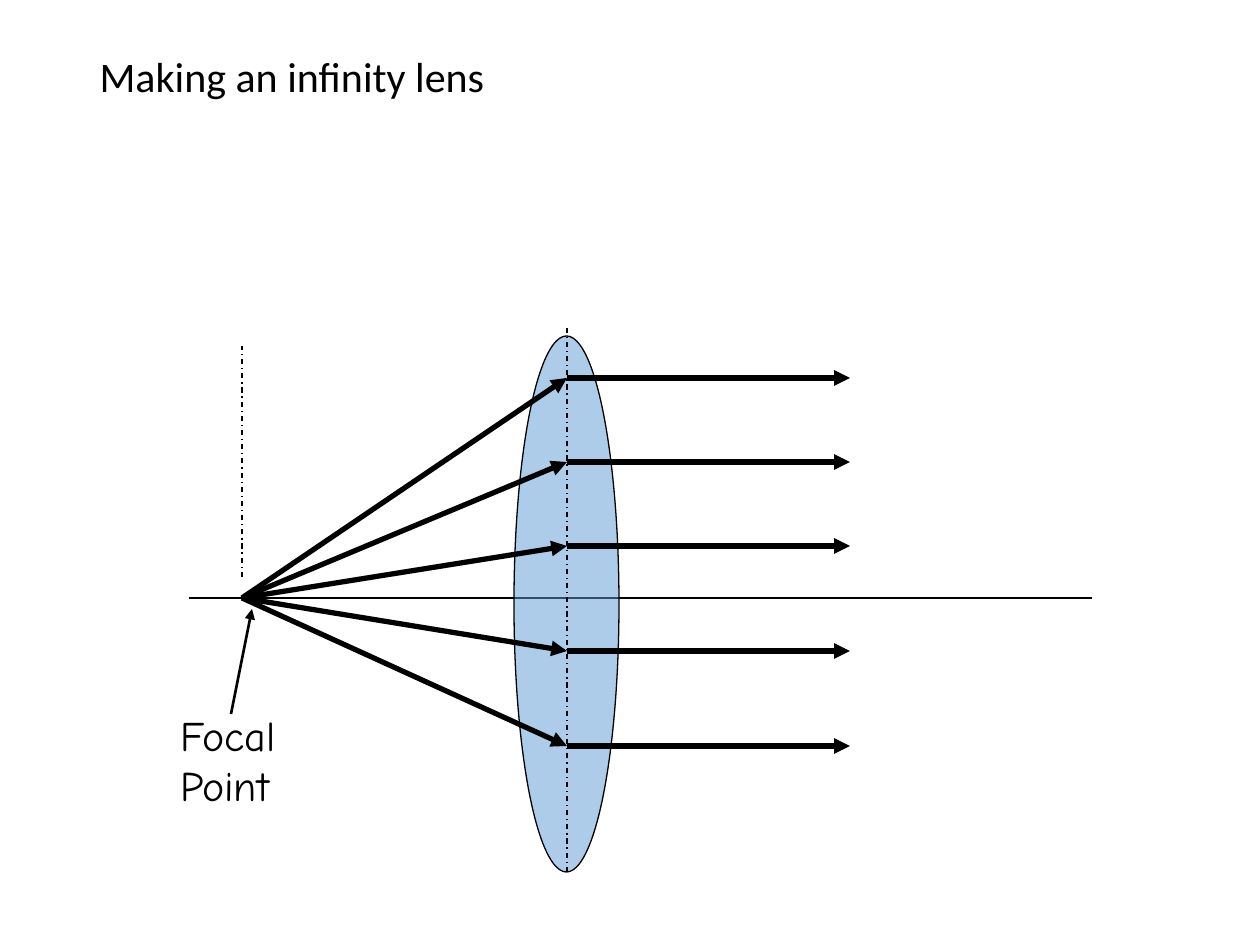
from lxml.etree import SubElement
from pptx import Presentation
from pptx.dml.color import RGBColor
from pptx.enum.dml import MSO_LINE
from pptx.enum.shapes import MSO_CONNECTOR, MSO_SHAPE
from pptx.enum.text import MSO_ANCHOR, MSO_AUTO_SIZE, PP_ALIGN
from pptx.oxml.ns import qn
from pptx.util import Emu, Pt

PX = 914400 // 126
BLACK = "000000"
TITLE = "Making an infinity lens"
TITLE_BOX = (87, 50, 1086, 183)
LABEL = ("Focal", "Point")
LABEL_BOX = (168, 703, 135, 130)
LENS_BOX = (514, 336, 105, 536)
FOCUS = (242, 598)
LENS_X = 567
RAY_END_X = 850
RAY_YS = (378, 462, 546, 651, 746)
AXIS = ((189, 598), (1092, 598))
POINTER = ((231, 714), (252, 609))
DASHED = [((242, 577), (242, 346)), ((567, 872), (567, 326))]


def px(*values):
    return [Emu(v * PX) for v in values]


def rgb(color):
    return RGBColor.from_string(color)


def add_line(shapes, start, end, width=0.75, arrow=False, dash=None):
    line = shapes.add_connector(MSO_CONNECTOR.STRAIGHT, *px(*start, *end))
    line.line.color.rgb = rgb(BLACK)
    line.line.width = Pt(width)
    if dash:
        line.line.dash_style = dash
    if arrow:
        SubElement(line.line._get_or_add_ln(), qn("a:tailEnd"), type="triangle")
    SubElement(line._element.spPr, qn("a:effectLst"))


def set_font(p, name):
    p.font.name = name
    p.font.size = Pt(24)
    p.font.color.rgb = rgb(BLACK)


def add_title(shapes):
    title = shapes.title
    title.left, title.top, title.width, title.height = px(*TITLE_BOX)
    tf = title.text_frame
    tf.text = TITLE
    tf.word_wrap = True
    tf.auto_size = MSO_AUTO_SIZE.NONE
    tf.vertical_anchor = MSO_ANCHOR.TOP
    p = tf.paragraphs[0]
    p.alignment = PP_ALIGN.LEFT
    p.line_spacing = 0.9
    set_font(p, "Calibri")


def add_lens(shapes):
    lens = shapes.add_shape(MSO_SHAPE.OVAL, *px(*LENS_BOX))
    lens.shadow.inherit = False
    lens.fill.solid()
    lens.fill.fore_color.rgb = rgb("5B9BD5")
    color = lens._element.spPr.find(qn("a:solidFill"))[0]
    SubElement(color, qn("a:alpha"), val="50000")
    lens.line.color.rgb = rgb(BLACK)
    lens.line.width = Pt(0.75)


def add_label(shapes):
    tf = shapes.add_textbox(*px(*LABEL_BOX)).text_frame
    tf.word_wrap = False
    tf.auto_size = MSO_AUTO_SIZE.SHAPE_TO_FIT_TEXT
    tf.text = "\n".join(LABEL)
    for p in tf.paragraphs:
        set_font(p, "Comic Neue")


def main():
    prs = Presentation()
    prs.slide_width, prs.slide_height = px(1260, 945)
    shapes = prs.slides.add_slide(prs.slide_layouts[5]).shapes
    add_title(shapes)
    add_line(shapes, *AXIS)
    add_lens(shapes)
    for y in RAY_YS:
        add_line(shapes, (LENS_X, y), (RAY_END_X, y), 3, arrow=True)
        add_line(shapes, FOCUS, (LENS_X, y), 3, arrow=True)
    add_label(shapes)
    add_line(shapes, *POINTER, 1.5, arrow=True)
    for ends in DASHED:
        add_line(shapes, *ends, dash=MSO_LINE.DASH_DOT)
    prs.save("out.pptx")


if __name__ == "__main__":
    main()
